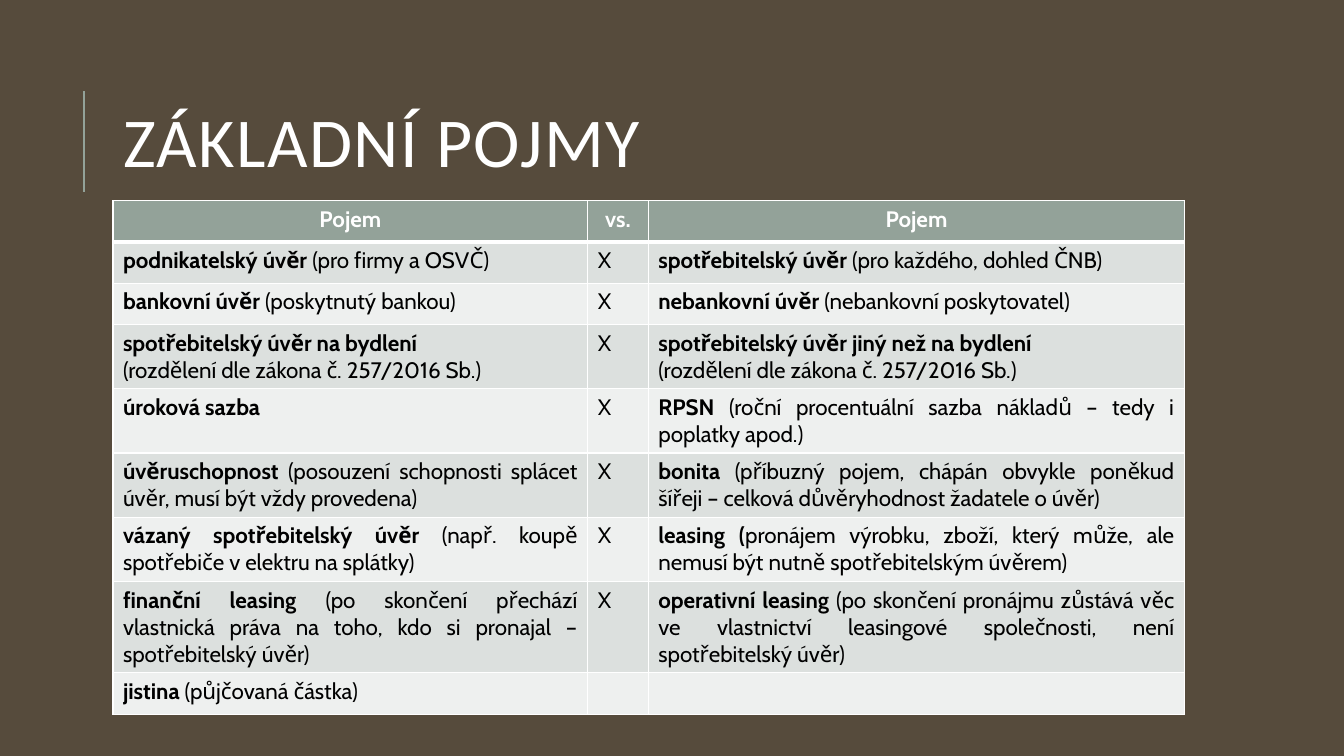
from lxml.etree import SubElement
from pptx import Presentation
from pptx.dml.color import RGBColor
from pptx.enum.shapes import MSO_CONNECTOR as CONN
from pptx.enum.text import MSO_ANCHOR as ANCHOR, PP_ALIGN as ALIGN
from pptx.oxml.ns import qn
from pptx.util import Inches, Pt

BROWN, SAGE, WHITE, BLACK = "564B3C", "93A299", "FFFFFF", "000000"
BANDS = ["DCE0DE", "EEF0EF"]
COLUMNS = [4.71, 0.6, 5.32]
ROW_HEIGHT = 0.41
LAW = "(rozdělení dle zákona č. 257/2016 Sb.)"

# Each term is a list of paragraphs: (bold part, plain part)
TERMS = [
    ([("podnikatelský úvěr ", "(pro firmy a OSVČ)")],
     [("spotřebitelský úvěr ", "(pro každého, dohled ČNB)")]),
    ([("bankovní úvěr ", "(poskytnutý bankou)")],
     [("nebankovní úvěr ", "(nebankovní poskytovatel)")]),
    ([("spotřebitelský úvěr na bydlení ", ""), ("", LAW)],
     [("spotřebitelský úvěr jiný než na bydlení ", ""), ("", LAW)]),
    ([("úroková sazba ", "")],
     [("RPSN ", "(roční procentuální sazba nákladů – tedy i poplatky apod.)")]),
    ([("úvěruschopnost ",
       "(posouzení schopnosti splácet úvěr, musí být vždy provedena)")],
     [("bonita", " (příbuzný pojem, chápán obvykle poněkud šířeji – "
                 "celková důvěryhodnost žadatele o úvěr)")]),
    ([("vázaný spotřebitelský úvěr ",
       "(např. koupě spotřebiče v elektru na splátky)")],
     [("leasing (", "pronájem výrobku, zboží, který může, ale nemusí být "
                    "nutně spotřebitelským úvěrem)")]),
    ([("finanční leasing ", "(po skončení přechází vlastnická práva na toho, "
                            "kdo si pronajal – spotřebitelský úvěr)")],
     [("operativní leasing ", "(po skončení pronájmu zůstává věc ve vlastnictví "
                              "leasingové společnosti, není spotřebitelský úvěr)")]),
    ([("jistina ", "(půjčovaná částka)")], []),
]


def rgb(color):
    return RGBColor.from_string(color)


def add_text(p, text, size=16, font="Cabin", color=BLACK, bold=False):
    r = p.add_run()
    r.text = text
    r.font.size, r.font.name, r.font.bold = Pt(size), font, bold
    r.font.color.rgb = rgb(color)
    return r


def set_borders(cell, **widths):
    """Draw white borders; widths in points by side (L, R, T, B), 1 by default."""
    tc_pr = cell._tc.get_or_add_tcPr()
    for side in "LRTB":
        ln = SubElement(tc_pr, qn(f"a:ln{side}"), w=str(Pt(widths.get(side, 1))))
        fill = SubElement(ln, qn("a:solidFill"))
        SubElement(fill, qn("a:srgbClr"), val=WHITE)


def fill_cell(cell, paragraphs, fill, color=BLACK, align=ALIGN.JUSTIFY, **borders):
    set_borders(cell, **borders)
    cell.fill.solid()
    cell.fill.fore_color.rgb = rgb(fill)
    tf = cell.text_frame
    for i, parts in enumerate(paragraphs):
        p = tf.add_paragraph() if i else tf.paragraphs[0]
        p.alignment = align
        for text, bold in zip(parts, (True, False)):
            if text:
                add_text(p, text, color=color, bold=bold)


def add_title(slide, text, left, top, width, height):
    sp = slide.shapes.title
    sp.left, sp.top, sp.width, sp.height = map(Inches, (left, top, width, height))
    tf = sp.text_frame
    tf.word_wrap = True
    tf.vertical_anchor = ANCHOR.MIDDLE
    p = tf.paragraphs[0]
    p.alignment, p.line_spacing = ALIGN.LEFT, 0.8
    r = add_text(p, text, size=50, font="Calibri", color=WHITE)
    r.font._element.set("spc", "100")

    x = Inches(left - 0.29)
    line = slide.shapes.add_connector(
        CONN.STRAIGHT, x, Inches(top + 1.26), x, Inches(top + 0.26))
    line.line.color.rgb = rgb(SAGE)
    line.line.width = Pt(1.5)
    SubElement(line._element.spPr, qn("a:effectLst"))


def add_terms_table(slide, left, top):
    rows = len(TERMS) + 1
    table = slide.shapes.add_table(
        rows, len(COLUMNS), Inches(left), Inches(top),
        Inches(sum(COLUMNS)), Inches(rows * ROW_HEIGHT)).table
    for column, width in zip(table.columns, COLUMNS):
        column.width = Inches(width)
    for row in table.rows:
        row.height = Inches(ROW_HEIGHT)

    for col, heading in enumerate(["Pojem", "vs.", "Pojem"]):
        fill_cell(table.cell(0, col), [(heading, "")], SAGE,
                  color=WHITE, align=ALIGN.CENTER, B=3)
    for row, (term, other) in enumerate(TERMS, 1):
        versus = [("", "X")] if other else []
        for col, paragraphs in enumerate([term, versus, other]):
            fill_cell(table.cell(row, col), paragraphs, BANDS[(row - 1) % 2],
                      align=ALIGN.JUSTIFY if other else ALIGN.LEFT,
                      T=3 if row == 1 else 1)


def main():
    prs = Presentation()
    prs.slide_width, prs.slide_height = Inches(13.33), Inches(7.5)
    slide = prs.slides.add_slide(prs.slide_layouts[5])
    slide.background.fill.solid()
    slide.background.fill.fore_color.rgb = rgb(BROWN)
    add_title(slide, "ZÁKLADNÍ POJMY", 1.12, 0.64, sum(COLUMNS), 1.64)
    add_terms_table(slide, 1.12, 1.99)
    prs.save("out.pptx")


if __name__ == "__main__":
    main()
